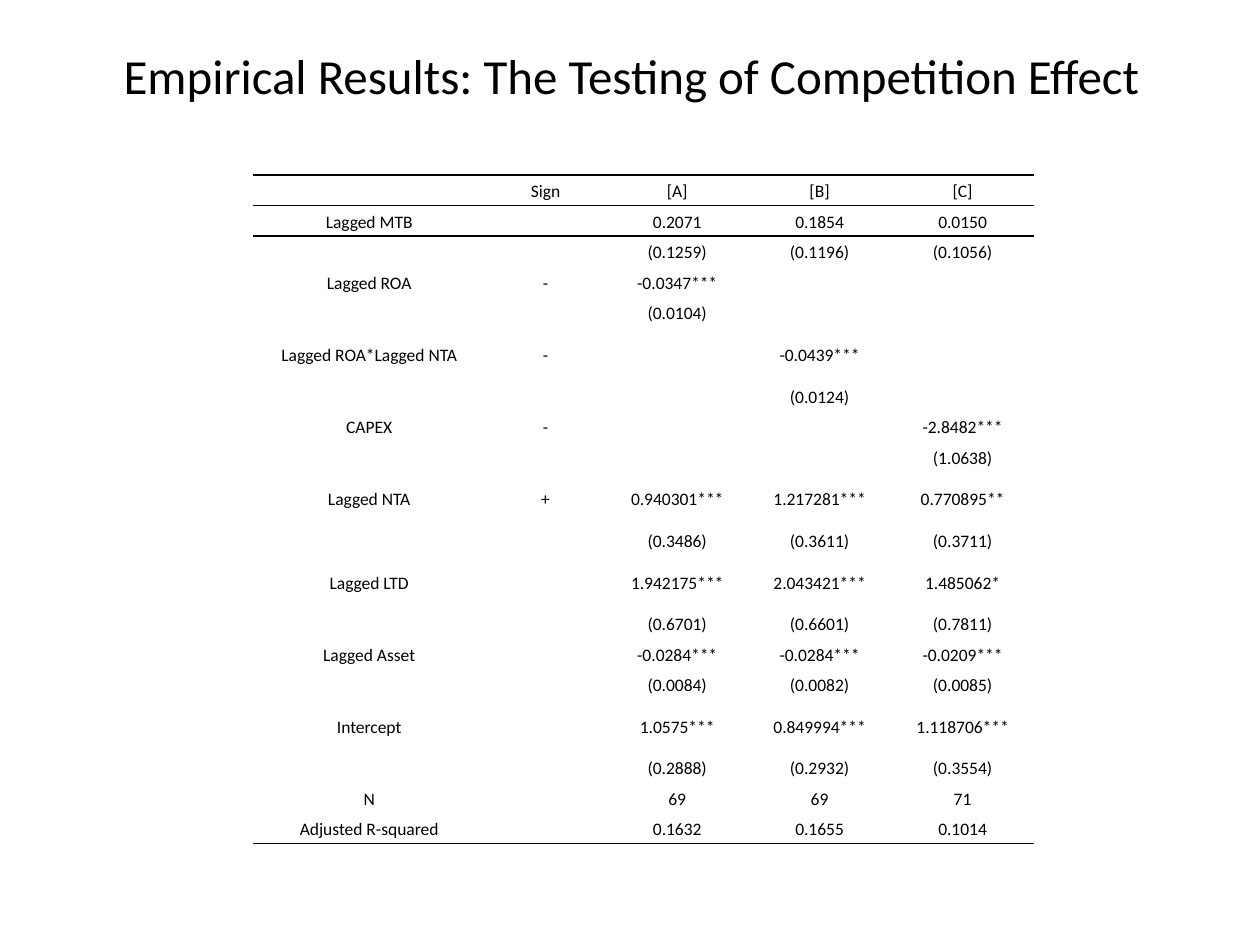
from lxml.etree import SubElement
from pptx import Presentation
from pptx.dml.color import RGBColor
from pptx.enum.text import MSO_ANCHOR, PP_ALIGN
from pptx.oxml import parse_xml
from pptx.oxml.ns import nsdecls, qn
from pptx.util import Inches, Pt

INK = "000000"
PLAIN = "{2D5ABB26-0587-4C30-8999-92F81FD0307C}"  # no style, no grid
ROWS = """|Sign|[A]|[B]|[C]
Lagged MTB||0.2071|0.1854|0.0150
||(0.1259)|(0.1196)|(0.1056)
Lagged ROA|-|-0.0347***||
||(0.0104)||
Lagged ROA*Lagged NTA|-||-0.0439***|
|||(0.0124)|
CAPEX|-|||-2.8482***
||||(1.0638)
Lagged NTA|+|0.940301***|1.217281***|0.770895**
||(0.3486)|(0.3611)|(0.3711)
Lagged LTD||1.942175***|2.043421***|1.485062*
||(0.6701)|(0.6601)|(0.7811)
Lagged Asset||-0.0284***|-0.0284***|-0.0209***
||(0.0084)|(0.0082)|(0.0085)
Intercept||1.0575***|0.849994***|1.118706***
||(0.2888)|(0.2932)|(0.3554)
N||69|69|71
Adjusted R-squared||0.1632|0.1655|0.1014"""
data = [line.split("|") for line in ROWS.splitlines()]
last = len(data) - 1


def style(para, size, color):
    para.alignment = PP_ALIGN.CENTER
    for run in para.runs:
        run.font.name = "Calibri"
        run.font.size = Pt(size)
        run.font.color.rgb = RGBColor.from_string(color)


def rule(cell, sides, color=INK):
    """Draw 1 pt lines on the given cell sides, named in schema order."""
    props = cell._tc.get_or_add_tcPr()
    for spot, side in enumerate(sides):
        props.insert(spot, parse_xml(
            f'<a:ln{side} {nsdecls("a")} w="12700"><a:solidFill>'
            f'<a:srgbClr val="{color}"/></a:solidFill></a:ln{side}>'))


deck = Presentation()
deck.slide_width, deck.slide_height = Inches(10), Inches(7.5)
slide = deck.slides.add_slide(deck.slide_layouts[5])

title = slide.shapes.title
title.left, title.top = Inches(0.51), Inches(0.28)
title.width, title.height = Inches(9), Inches(0.63)
title.text_frame.text = "Empirical Results: The Testing of Competition Effect"
title.text_frame.vertical_anchor = MSO_ANCHOR.MIDDLE
style(title.text_frame.paragraphs[0], 28, INK)

wide = [1.84, 0.96, 1.13, 1.13, 1.14]
high = 5.31
tall = {5, 9, 11, 15}  # rows with extra height
extra = 0.42
low = (high - extra * len(tall)) / (len(data) - len(tall))

frame = slide.shapes.add_table(len(data), len(wide), Inches(2.01),
                               Inches(1.39), Inches(sum(wide)), Inches(high))
table = frame.table
table.first_row = table.horz_banding = False
table._tbl.tblPr.find(qn("a:tableStyleId")).text = PLAIN
for col, width in zip(table.columns, wide):
    col.width = Inches(width)

edges = {0: "TB", 1: "T", last: "B"}
for r, texts in enumerate(data):
    table.rows[r].height = Inches(extra if r in tall else low)
    for c, text in enumerate(texts):
        cell = table.cell(r, c)
        cell.fill.background()
        cell.vertical_anchor = MSO_ANCHOR.MIDDLE
        cell.margin_left = cell.margin_right = Inches(0.07)
        cell.margin_top = cell.margin_bottom = 0
        cell.text_frame.text = text
        para = cell.text_frame.paragraphs[0]
        para.line_spacing = 1.15
        style(para, 10, INK)
        # keeps empty cells from stretching their row
        SubElement(para._p, qn("a:endParaRPr"), sz="1000")
        rule(cell, edges.get(r, ""))

deck.save("out.pptx")
